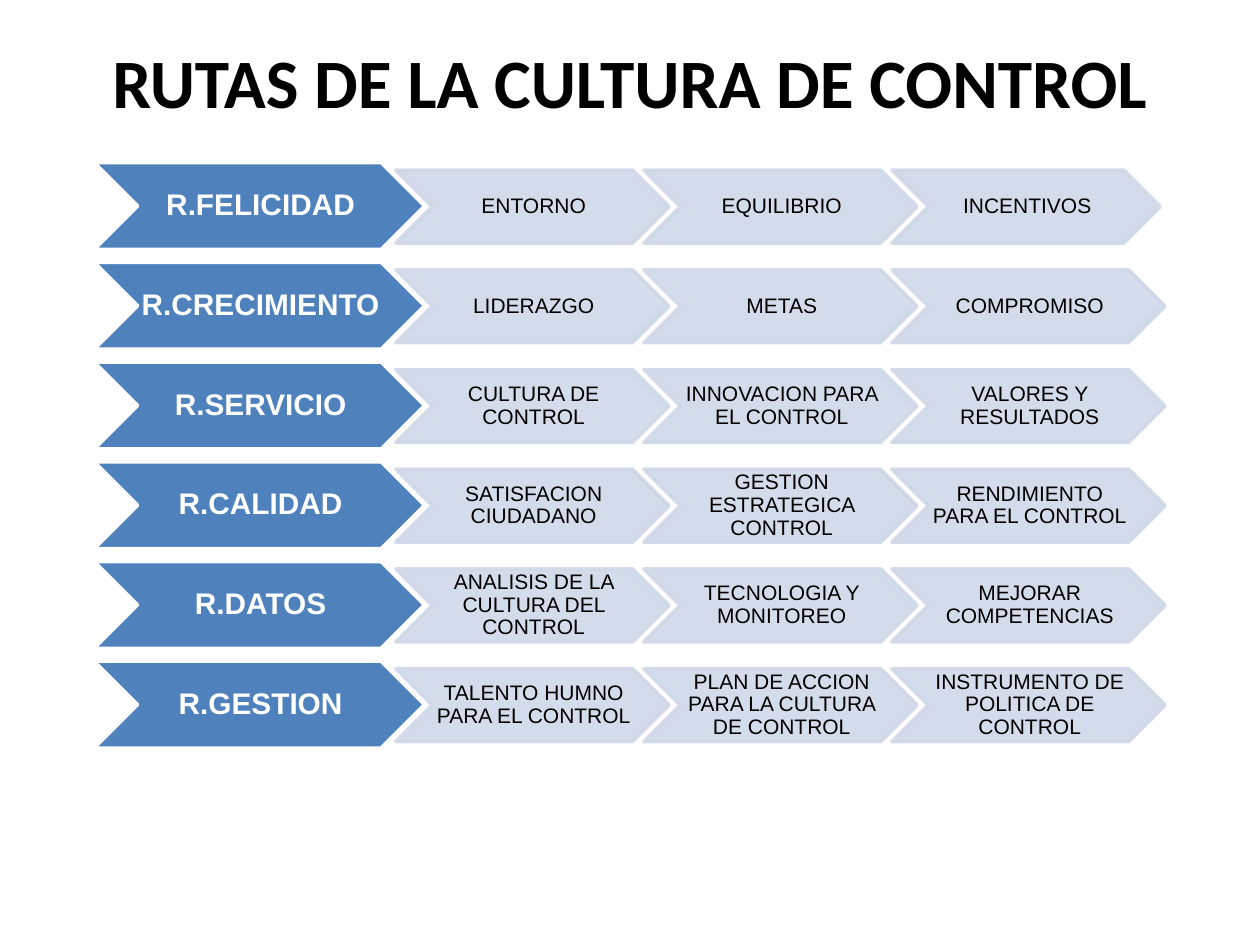
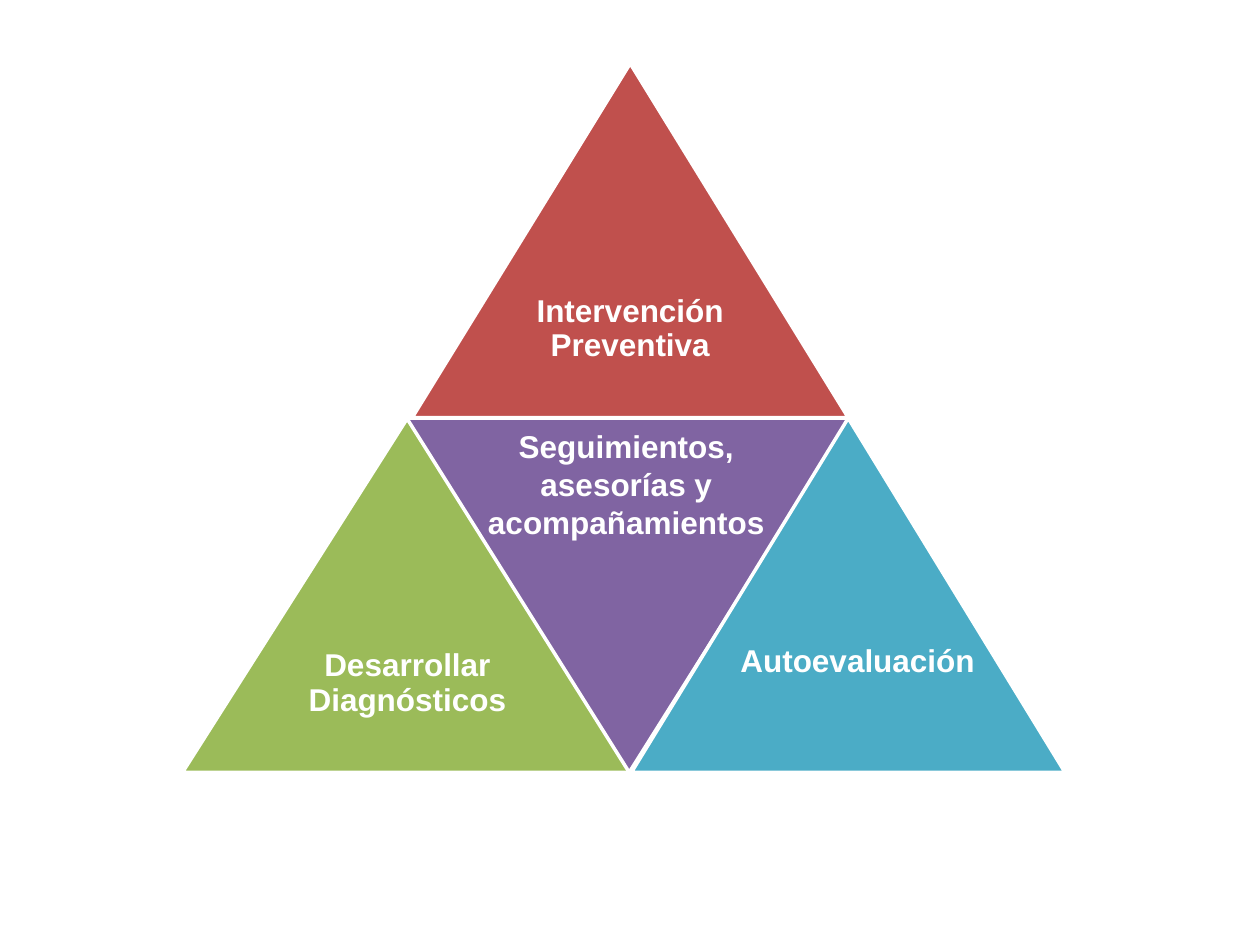
from dataclasses import dataclass

from lxml import etree
from pptx import Presentation
from pptx import util as u
from pptx.dml.color import RGBColor
from pptx.enum import shapes, text
from pptx.oxml import ns


@dataclass(frozen=True)
class Theme:
    head: str = "Calibri"
    body: str = "Arial"
    ink: str = "000000"
    paper: str = "FFFFFF"
    blue: str = "4F81BD"
    pale: str = "D0D8E8"
    red: str = "C0504D"
    green: str = "9BBB59"
    plum: str = "8064A2"
    teal: str = "4BACC6"
    title: float = 39.6
    lead: int = 17
    step: int = 12
    peak: int = 18
    edge: int = 2
    alpha: int = 90


THEME = Theme()
KIND = shapes.MSO_SHAPE
SNUG = (0.05, 0.03, 0, 0.03)
ROOMY = (0.18, 0.18, 0.18, 0.18)
LOOSE = (0.25, 0.13, 0.25, 0.13)

ROUTES = [
    ("R.FELICIDAD", "ENTORNO", "EQUILIBRIO", "INCENTIVOS"),
    ("R.CRECIMIENTO", "LIDERAZGO", "METAS", "COMPROMISO"),
    ("R.SERVICIO", "CULTURA DE CONTROL", "INNOVACION PARA EL CONTROL",
     "VALORES Y RESULTADOS"),
    ("R.CALIDAD", "SATISFACION CIUDADANO", "GESTION ESTRATEGICA CONTROL",
     "RENDIMIENTO PARA EL CONTROL"),
    ("R.DATOS", "ANALISIS DE LA CULTURA DEL CONTROL",
     "TECNOLOGIA Y MONITOREO", "MEJORAR COMPETENCIAS"),
    ("R.GESTION", "TALENTO HUMNO PARA EL CONTROL",
     "PLAN DE ACCION PARA LA CULTURA DE CONTROL",
     "INSTRUMENTO DE POLITICA DE CONTROL"),
]


def place(box):
    return [u.Cm(side) for side in box]


def write(frame, words, size, color, bold=True, font=THEME.body,
          pads=LOOSE, anchor=text.MSO_ANCHOR.MIDDLE, space=None):
    frame.word_wrap = True
    frame.auto_size = text.MSO_AUTO_SIZE.NONE
    frame.vertical_anchor = anchor
    (frame.margin_left, frame.margin_top,
     frame.margin_right, frame.margin_bottom) = place(pads)
    para = frame.paragraphs[0]
    para.alignment = text.PP_ALIGN.CENTER
    para.line_spacing = space
    run = para.add_run()
    run.text = words
    run.font.name = font
    run.font.size = u.Pt(size)
    run.font.bold = bold
    run.font.color.rgb = RGBColor.from_string(color)


def fade(shape):
    for node in shape.element.spPr.iter(ns.qn("a:srgbClr")):
        etree.SubElement(node, ns.qn("a:alpha"), val=str(THEME.alpha * 1000))


def draw(group, kind, box, fill, edge=THEME.paper):
    shape = group.add_shape(kind, *place(box))
    shape.shadow.inherit = False
    shape.fill.solid()
    shape.fill.fore_color.rgb = RGBColor.from_string(fill)
    shape.line.color.rgb = RGBColor.from_string(edge)
    shape.line.width = u.Pt(THEME.edge)
    return shape


def label(slide, box, words):
    frame = slide.shapes.add_textbox(*place(box)).text_frame
    write(frame, words, THEME.peak, THEME.paper, anchor=text.MSO_ANCHOR.TOP)


def head(slide, words):
    title = slide.shapes.title
    title.left, title.top, title.width, title.height = place(
        (1.75, 0.25, 21.9, 2.77))
    write(title.text_frame, words, THEME.title, THEME.ink, font=THEME.head)


def route(group, row, names):
    top = 3.28 + 2.01 * row
    lead, *steps = names
    shape = draw(group, KIND.CHEVRON, (1.9, top, 6.66, 1.75), THEME.blue)
    write(shape.text_frame, lead, THEME.lead, THEME.paper,
          pads=SNUG, space=0.9)
    for col, name in enumerate(steps):
        width = 5.41 if (row, col) == (0, 2) else 5.51
        box = (7.98 + 5 * col, top + 0.15, width, 1.47)
        shape = draw(group, KIND.CHEVRON, box, THEME.pale, THEME.pale)
        fade(shape)
        write(shape.text_frame, name, THEME.step, THEME.ink, bold=False,
              pads=SNUG, space=0.9)


def peak(group, box, fill, words=None, turn=0):
    shape = draw(group, KIND.ISOSCELES_TRIANGLE, box, fill)
    shape.rotation = turn
    if words:
        write(shape.text_frame, words, THEME.peak, THEME.paper,
              pads=ROOMY, space=0.9)


def routes(deck):
    slide = deck.slides.add_slide(deck.slide_layouts[5])
    head(slide, "RUTAS DE LA CULTURA DE CONTROL")
    group = slide.shapes.add_group_shape().shapes
    for row, names in enumerate(ROUTES):
        route(group, row, names)


def pyramid(deck):
    slide = deck.slides.add_slide(deck.slide_layouts[6])
    group = slide.shapes.add_group_shape().shapes
    high, base = 7.14, 8.43
    peak(group, (8.31, 1.28, 8.79, high), THEME.red,
         "Intervención Preventiva")
    peak(group, (3.68, base, 9.07, high), THEME.green,
         "Desarrollar Diagnósticos")
    peak(group, (8.2, base, 8.97, high), THEME.plum, turn=180)
    peak(group, (12.73, base, 8.74, high), THEME.teal)
    label(slide, (9.02, 8.48, 7.21, 3.33),
          "Seguimientos, asesorías y acompañamientos")
    label(slide, (14.33, 12.8, 5.92, 1.8), "Autoevaluación")


def main():
    deck = Presentation()
    deck.slide_width, deck.slide_height = u.Cm(25.4), u.Cm(19.05)
    routes(deck)
    pyramid(deck)
    deck.save("out.pptx")


if __name__ == "__main__":
    main()
